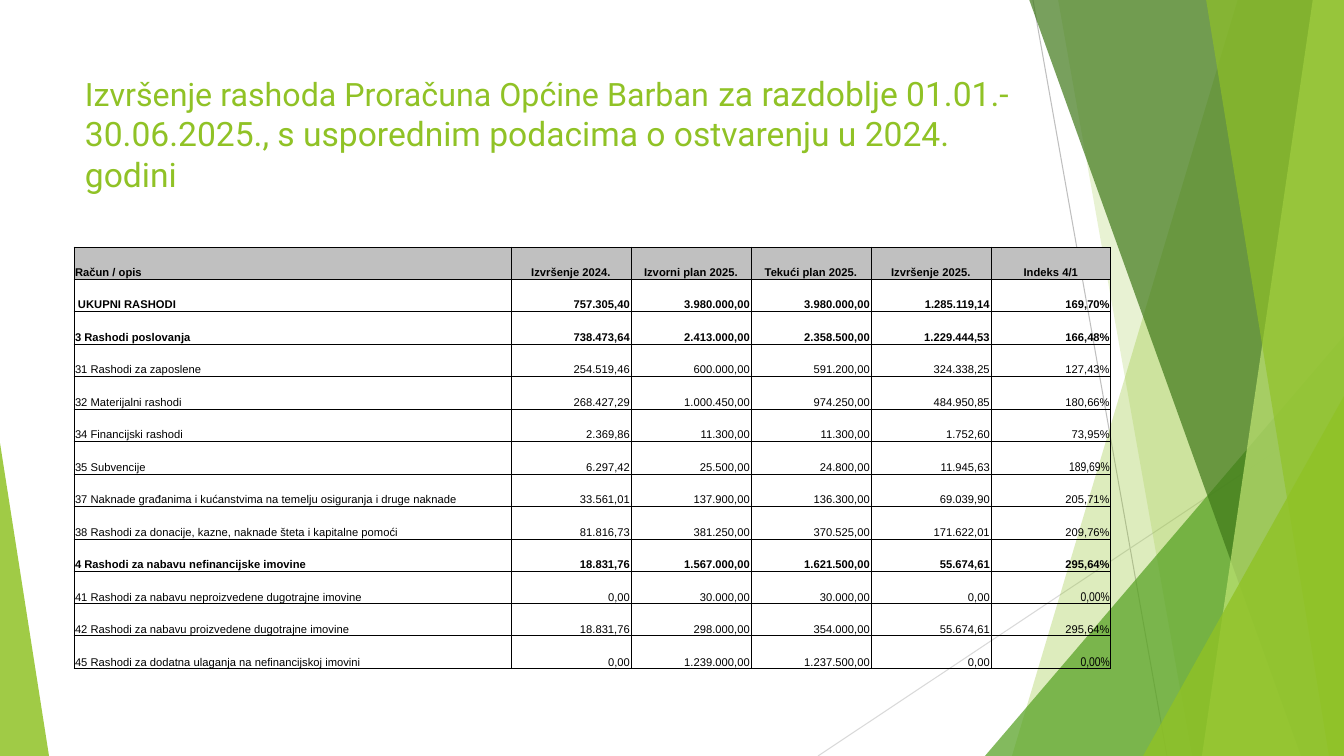
from dataclasses import dataclass

from lxml.etree import SubElement
from pptx import Presentation
from pptx.dml.color import RGBColor
from pptx.enum.shapes import MSO_CONNECTOR, MSO_SHAPE
from pptx.enum.text import MSO_ANCHOR, PP_ALIGN
from pptx.oxml.ns import qn
from pptx.util import Pt


@dataclass(frozen=True)
class Theme:
    lime: str = "90C226"
    pale_lime: str = "C0E474"
    green: str = "54A021"
    forest: str = "3F7819"
    ray_grey: str = "BFBFBF"
    pale_grey: str = "D9D9D9"
    header_grey: str = "C0C0C0"
    ink: str = "000000"
    title_font: str = "Roboto"
    table_font: str = "Arial"
    narrow_font: str = "Arial Narrow"
    title_small: int = 23
    title_large: int = 24
    table_size: int = 8
    narrow_size: int = 9
    ray_width: float = 0.75
    border_width: float = 0.5


theme = Theme()
PX = 914400 / 100.8


def px(*lengths):
    return [round(length * PX) for length in lengths]


def write(paragraph, text, size=theme.table_size, font=theme.table_font,
          color=theme.ink, bold=False, align=PP_ALIGN.LEFT):
    paragraph.alignment = align
    run = paragraph.add_run()
    run.text = text
    run.font.size = Pt(size)
    run.font.name = font
    run.font.bold = bold
    run.font.color.rgb = RGBColor.from_string(color)


presentation = Presentation()
presentation.slide_width, presentation.slide_height = px(1344, 756)
slide = presentation.slides.add_slide(presentation.slide_layouts[6])

rays = [
    ((1033, 0, 1167, 756), theme.ray_grey),
    ((1344, 406, 818, 756), theme.pale_grey),
]
for ends, color in rays:
    ray = slide.shapes.add_connector(MSO_CONNECTOR.STRAIGHT, *px(*ends))
    ray.line.color.rgb = RGBColor.from_string(color)
    ray.line.width = Pt(theme.ray_width)
    SubElement(ray._element.spPr, qn("a:effectLst"))

# Each band runs from its top x to its bottom x and fills to the right edge.
facets = [
    ("band", (1238, 1012), theme.lime, 30),
    ("band", (1058, 1192), theme.lime, 20),
    ("triangle", (985, 336, 359, 420, 1), theme.green, 72),
    ("band", (1029, 1301), theme.forest, 70),
    ("band", (1313, 1202), theme.pale_lime, 70),
    ("band", (1206, 1329), theme.lime, 65),
    ("triangle", (1143, 396, 201, 360, 1), theme.lime, 80),
    ("triangle", (0, 443, 49, 313, 0), theme.lime, 85),
]
for kind, geometry, color, opacity in facets:
    if kind == "band":
        top_x, bottom_x = geometry
        outline = slide.shapes.build_freeform(top_x, -1, scale=PX)
        outline.add_line_segments([(1344, -1), (1344, 756), (bottom_x, 756)], close=True)
        facet = outline.convert_to_shape()
    else:
        *box, apex = geometry
        facet = slide.shapes.add_shape(MSO_SHAPE.ISOSCELES_TRIANGLE, *px(*box))
        facet.adjustments[0] = apex
    facet.shadow.inherit = False
    facet.line.fill.background()
    facet.fill.solid()
    facet.fill.fore_color.rgb = RGBColor.from_string(color)
    facet_color = facet._element.spPr.find(qn("a:solidFill"))[0]
    SubElement(facet_color, qn("a:alpha"), val=str(opacity * 1000))

title = slide.shapes.add_textbox(*px(75, 68, 947, 145)).text_frame
title.word_wrap = True
title.vertical_anchor = MSO_ANCHOR.TOP
title_parts = [
    ("Izvršenje rashoda Proračuna Općine Barban ", theme.title_small),
    ("za razdoblje 01.01.-30.06.2025., s usporednim podacima o ostvarenju u 2024. godini",
     theme.title_large),
]
for text, size in title_parts:
    write(title.paragraphs[0], text, size=size, font=theme.title_font, color=theme.lime)

expenses = [
    ("Račun / opis", "Izvršenje 2024.", "Izvorni plan 2025.", "Tekući plan 2025.",
     "Izvršenje 2025.", "Indeks 4/1"),
    ("UKUPNI RASHODI", "757.305,40", "3.980.000,00", "3.980.000,00", "1.285.119,14", "169,70%"),
    ("3 Rashodi poslovanja", "738.473,64", "2.413.000,00", "2.358.500,00", "1.229.444,53",
     "166,48%"),
    ("31 Rashodi za zaposlene", "254.519,46", "600.000,00", "591.200,00", "324.338,25", "127,43%"),
    ("32 Materijalni rashodi", "268.427,29", "1.000.450,00", "974.250,00", "484.950,85",
     "180,66%"),
    ("34 Financijski rashodi", "2.369,86", "11.300,00", "11.300,00", "1.752,60", "73,95%"),
    ("35 Subvencije", "6.297,42", "25.500,00", "24.800,00", "11.945,63", "189,69%"),
    ("37 Naknade građanima i kućanstvima na temelju osiguranja i druge naknade",
     "33.561,01", "137.900,00", "136.300,00", "69.039,90", "205,71%"),
    ("38 Rashodi za donacije, kazne, naknade šteta i kapitalne pomoći",
     "81.816,73", "381.250,00", "370.525,00", "171.622,01", "209,76%"),
    ("4 Rashodi za nabavu nefinancijske imovine",
     "18.831,76", "1.567.000,00", "1.621.500,00", "55.674,61", "295,64%"),
    ("41 Rashodi za nabavu neproizvedene dugotrajne imovine",
     "0,00", "30.000,00", "30.000,00", "0,00", "0,00%"),
    ("42 Rashodi za nabavu proizvedene dugotrajne imovine",
     "18.831,76", "298.000,00", "354.000,00", "55.674,61", "295,64%"),
    ("45 Rashodi za dodatna ulaganja na nefinancijskoj imovini",
     "0,00", "1.239.000,00", "1.237.500,00", "0,00", "0,00%"),
]
column_widths = [437] + [120] * 5
table_height = 422
row_count = len(expenses)
table = slide.shapes.add_table(row_count, len(column_widths),
                               *px(74, 247, sum(column_widths), table_height)).table
table.first_row = table.horz_banding = False
for column, width in zip(table.columns, px(*column_widths)):
    column.width = width

for row, entries in enumerate(expenses):
    row_top, row_bottom = (table_height * edge // row_count for edge in (row, row + 1))
    table.rows[row].height = px(row_bottom - row_top)[0]
    account = entries[0].split()[0]
    is_main = not account.isdigit() or len(account) == 1
    for col, text in enumerate(entries):
        cell = table.cell(row, col)
        left_inset = 4 if account == "UKUPNI" and col == 0 else 1
        cell.margin_left, cell.margin_top, cell.margin_right, cell.margin_bottom = px(
            left_inset, 1, 1, 0)
        cell.vertical_anchor = MSO_ANCHOR.BOTTOM
        cell_properties = cell._tc.get_or_add_tcPr()
        for side in ("a:lnL", "a:lnR", "a:lnT", "a:lnB"):
            border = SubElement(cell_properties, qn(side), w=str(Pt(theme.border_width)))
            SubElement(SubElement(border, qn("a:solidFill")), qn("a:srgbClr"), val=theme.ink)
        if row == 0:
            cell.fill.solid()
            cell.fill.fore_color.rgb = RGBColor.from_string(theme.header_grey)
        else:
            cell.fill.background()
        is_narrow = col == 5 and account in ("35", "41", "45")
        value_align = PP_ALIGN.CENTER if row == 0 else PP_ALIGN.RIGHT
        write(cell.text_frame.paragraphs[0], text, bold=is_main,
              size=theme.narrow_size if is_narrow else theme.table_size,
              font=theme.narrow_font if is_narrow else theme.table_font,
              align=PP_ALIGN.LEFT if col == 0 else value_align)

presentation.save("out.pptx")
